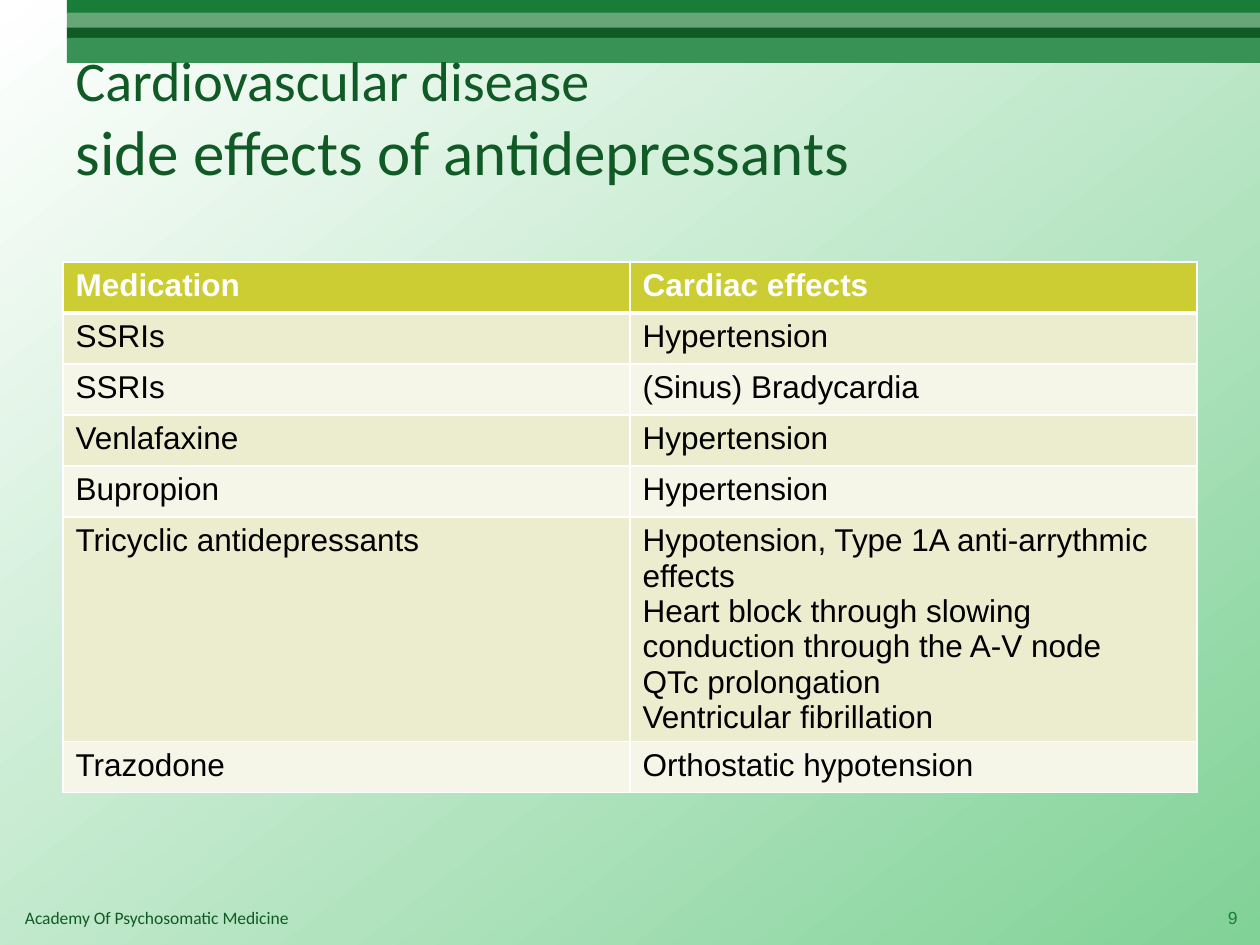
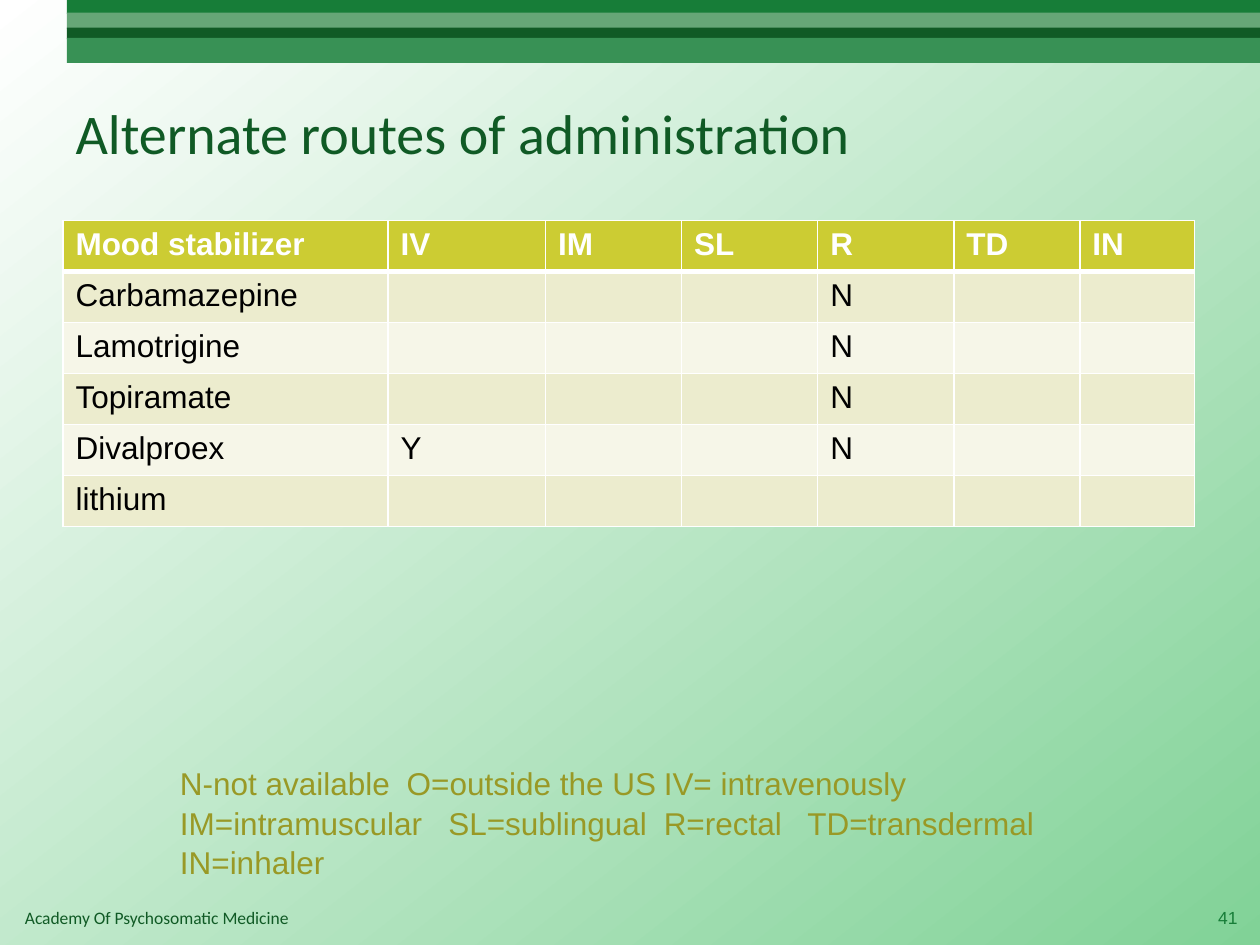
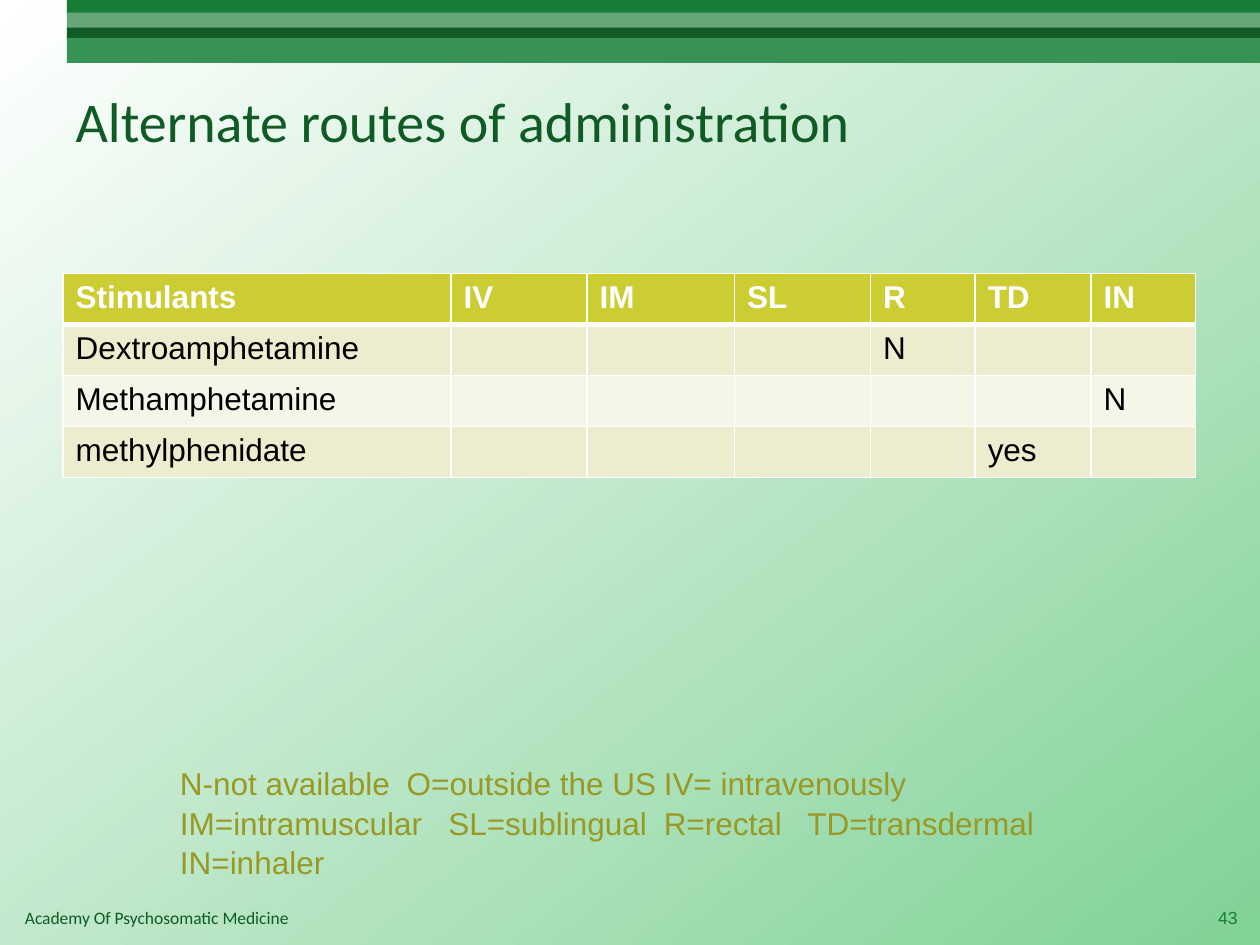
from dataclasses import dataclass

from lxml.etree import SubElement
from pptx import Presentation
from pptx.dml.color import RGBColor
from pptx.enum.shapes import MSO_SHAPE
from pptx.enum.text import MSO_ANCHOR, MSO_AUTO_SIZE, PP_ALIGN
from pptx.oxml.ns import qn
from pptx.util import Inches, Pt


@dataclass(frozen=True)
class Theme:
    heading_font: str = "Calibri"
    body_font: str = "Arial"
    dark_green: str = "105A25"
    mid_green: str = "177D38"
    pale_green: str = "81D297"
    white: str = "FFFFFF"
    black: str = "000000"
    olive: str = "999926"
    header_fill: str = "CCCC33"
    row_fills: tuple = ("ECECCE", "F6F6E8")
    title_size: int = 32
    large_title_size: int = 36
    body_size: int = 18
    footer_size: int = 10


THEME = Theme()

# Content
FOOTER = "Academy Of Psychosomatic Medicine"
ROUTES = ["IV", "IM", "SL", "R", "TD", "IN"]
LEGEND = [
    ["N-not available", "O=outside the US", "IV= intravenously"],
    ["IM=intramuscular", "SL=sublingual", "R=rectal", "TD=transdermal"],
    ["IN=inhaler"],
]
LEGEND_TABS = [1.8, 2.13, 3.84, 4.98]
ROUTES_TITLE = [("Alternate routes of administration", THEME.title_size)]


def route_row(drug, **availability):
    return [drug] + [availability.get(route, "") for route in ROUTES]


SLIDES = [
    {
        "number": 9,
        "title": [("Cardiovascular disease", THEME.title_size),
                  ("side effects of antidepressants", THEME.large_title_size)],
        "title_top": 0.3,
        "table_top": 2.08,
        "table_height": 4.33,
        "columns": [4.5, 4.5],
        "rows": [
            ["Medication", "Cardiac effects"],
            ["SSRIs", "Hypertension"],
            ["SSRIs", "(Sinus) Bradycardia"],
            ["Venlafaxine", "Hypertension"],
            ["Bupropion", "Hypertension"],
            ["Tricyclic antidepressants",
             "Hypotension, Type 1A anti-arrythmic effects\n"
             "Heart block through slowing conduction through the A-V node\n"
             "QTc prolongation\n"
             "Ventricular fibrillation"],
            ["Trazodone", "Orthostatic hypotension"],
        ],
        "legend": False,
    },
    {
        "number": 41,
        "title": ROUTES_TITLE,
        "title_top": 0.42,
        "table_top": 1.75,
        "table_height": 2.43,
        "columns": [2.58, 1.25, 1.08, 1.08, 1.08, 1, 0.91],
        "rows": [
            ["Mood stabilizer"] + ROUTES,
            route_row("Carbamazepine", R="N"),
            route_row("Lamotrigine", R="N"),
            route_row("Topiramate", R="N"),
            route_row("Divalproex", IV="Y", R="N"),
            route_row("lithium"),
        ],
        "legend": True,
    },
    {
        "number": 43,
        "title": ROUTES_TITLE,
        "title_top": 0.33,
        "table_top": 2.17,
        "table_height": 1.62,
        "columns": [3.08, 1.08, 1.17, 1.08, 0.83, 0.92, 0.83],
        "rows": [
            ["Stimulants"] + ROUTES,
            route_row("Dextroamphetamine", R="N"),
            route_row("Methamphetamine", IN="N"),
            route_row("methylphenidate", TD="yes"),
        ],
        "legend": True,
    },
]

# Shared layout: band top, height, colour
BANDS = [
    (0, 0.11, THEME.mid_green),
    (0.1, 0.13, "66A677"),
    (0.22, 0.09, THEME.dark_green),
    (0.3, 0.2, "389155"),
]
MARGIN, CONTENT_WIDTH = Inches(0.5), Inches(9)
ROW_HEIGHT = Inches(1.62) // 4


def style_font(font, name, size, color, bold=False):
    font.name, font.size, font.bold = name, Pt(size), bold
    font.color.rgb = RGBColor.from_string(color)


def add_label(slide, text, place, font_name, size, color):
    label = slide.shapes.add_textbox(*map(Inches, place))
    label.text_frame.word_wrap = True
    paragraph = label.text_frame.paragraphs[0]
    paragraph.text = text
    style_font(paragraph.font, font_name, size, color)
    return label.text_frame, paragraph


# Background, bands, footer and page number
def paint_background(master):
    fill = master.background.fill
    fill.gradient()
    fill.gradient_angle = 308
    for stop, color in zip(fill.gradient_stops, (THEME.white, THEME.pale_green)):
        stop.color.rgb = RGBColor.from_string(color)


def add_frame(slide, number):
    for top, height, color in BANDS:
        band = slide.shapes.add_shape(MSO_SHAPE.RECTANGLE, Inches(0.53), Inches(top),
                                      Inches(9.49), Inches(height))
        band.shadow.inherit = False
        band.fill.solid()
        band.fill.fore_color.rgb = RGBColor.from_string(color)
        band.line.fill.background()
    add_label(slide, FOOTER, (0.1, 7.15, 6.94, 0.27),
              THEME.heading_font, THEME.footer_size, THEME.dark_green)
    frame, page = add_label(slide, str(number), (9.52, 7.08, 0.4, 0.4),
                            THEME.body_font, THEME.footer_size, THEME.mid_green)
    frame.vertical_anchor = MSO_ANCHOR.MIDDLE
    page.alignment = PP_ALIGN.RIGHT


# Title
def set_title(slide, lines, top):
    title = slide.shapes.title
    title.left, title.top = MARGIN, Inches(top)
    title.width, title.height = CONTENT_WIDTH, Inches(1.25)
    title.text_frame.auto_size = MSO_AUTO_SIZE.NONE
    title.text_frame.vertical_anchor = MSO_ANCHOR.MIDDLE
    paragraph = title.text_frame.paragraphs[0]
    paragraph.alignment = PP_ALIGN.LEFT
    for index, (text, size) in enumerate(lines):
        if index:
            paragraph.add_line_break()
        run = paragraph.add_run()
        run.text = text
        style_font(run.font, THEME.heading_font, size, THEME.dark_green)
    # Bring the title in front of the bands
    slide.shapes.element.append(title.element)


# Table
def set_borders(cell, row_index):
    header_rule = {0: "B", 1: "T"}.get(row_index)
    properties = cell._tc.get_or_add_tcPr()
    for side in "LRTB":
        width = 3 if side == header_rule else 1
        line = SubElement(properties, qn(f"a:ln{side}"), w=str(Pt(width)))
        solid = SubElement(line, qn("a:solidFill"))
        SubElement(solid, qn("a:srgbClr"), val=THEME.white)


def fill_cell(cell, text, row_index):
    header = row_index == 0
    fill = THEME.header_fill if header else THEME.row_fills[(row_index - 1) % 2]
    set_borders(cell, row_index)
    cell.fill.solid()
    cell.fill.fore_color.rgb = RGBColor.from_string(fill)
    cell.text = text
    for paragraph in cell.text_frame.paragraphs:
        style_font(paragraph.font, THEME.body_font, THEME.body_size,
                   THEME.white if header else THEME.black, header)


def add_effects_table(slide, rows, columns, top, height):
    holder = slide.shapes.add_table(len(rows), len(columns), MARGIN, Inches(top),
                                    CONTENT_WIDTH, Inches(height))
    table = holder.table
    table.horz_banding = False
    for column, width in zip(table.columns, columns):
        column.width = Inches(width)
    for row_index, (row, texts) in enumerate(zip(table.rows, rows)):
        row.height = ROW_HEIGHT
        for cell, text in zip(row.cells, texts):
            fill_cell(cell, text, row_index)
    holder.height = Inches(height)


# Legend of abbreviations, aligned on tab stops
def add_legend(slide):
    text = "\n".join("\t".join(entries) for entries in LEGEND)
    _, paragraph = add_label(slide, "", (1.33, 6, 7.67, 1.01),
                             THEME.body_font, THEME.body_size, THEME.olive)
    properties = paragraph._p.get_or_add_pPr()
    properties.clear()
    paragraph.line_spacing = 1.05
    stops = SubElement(properties, qn("a:tabLst"))
    for position in LEGEND_TABS:
        SubElement(stops, qn("a:tab"), pos=str(Inches(position)), algn="l")
    paragraph.text = text.replace("\n", "\v")
    style_font(paragraph.font, THEME.body_font, THEME.body_size, THEME.olive)


def main():
    deck = Presentation()
    deck.slide_width, deck.slide_height = Inches(10), Inches(7.5)
    paint_background(deck.slide_master)
    title_only = deck.slide_layouts[5]
    for content in SLIDES:
        slide = deck.slides.add_slide(title_only)
        add_frame(slide, content["number"])
        set_title(slide, content["title"], content["title_top"])
        add_effects_table(slide, content["rows"], content["columns"],
                          content["table_top"], content["table_height"])
        if content["legend"]:
            add_legend(slide)
    deck.save("out.pptx")


if __name__ == "__main__":
    main()
